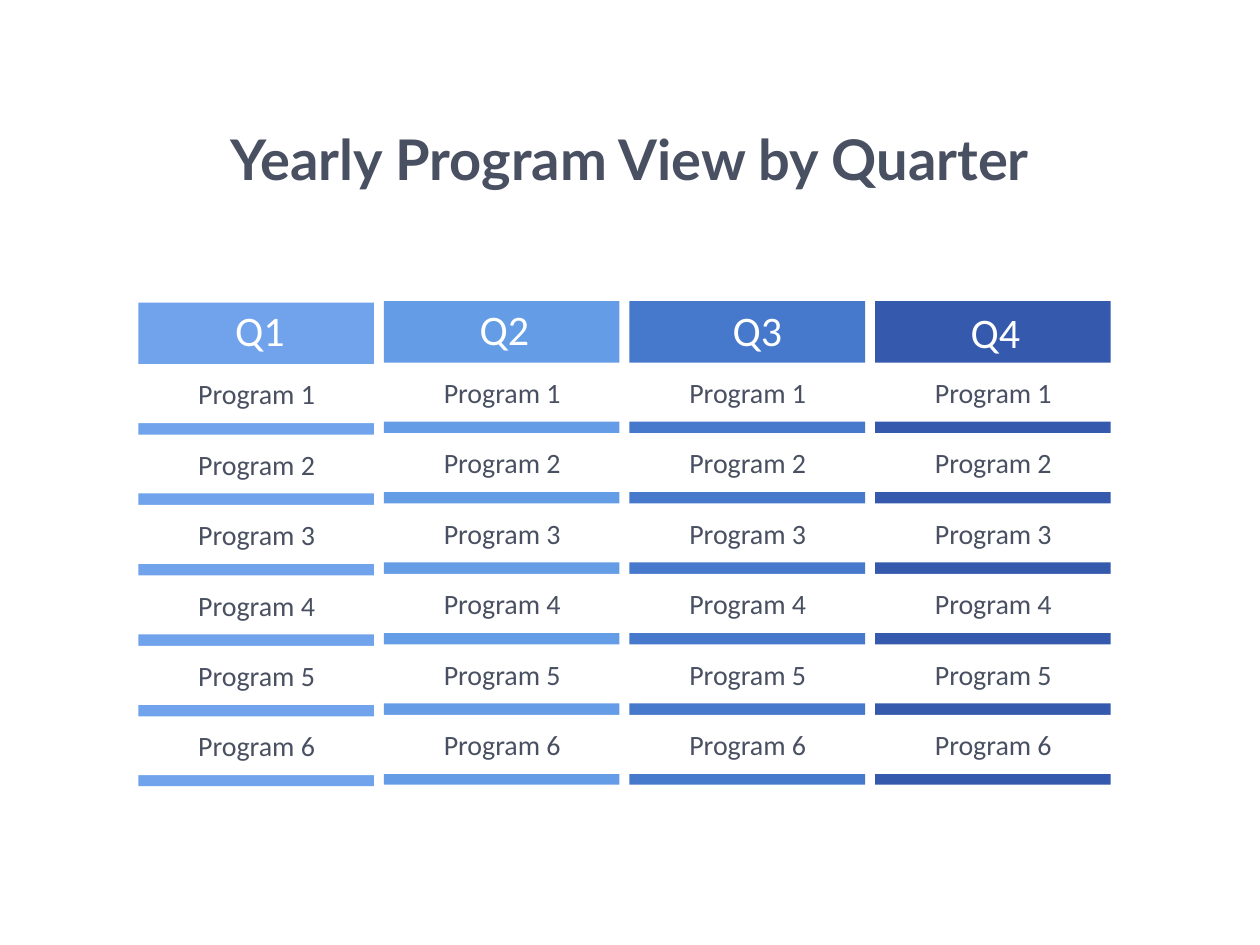
from pptx import Presentation
from pptx.dml.color import RGBColor as Rgb
from pptx.enum.shapes import MSO_SHAPE as Shape
from pptx.enum.text import MSO_ANCHOR as Anchor, MSO_AUTO_SIZE as Auto, PP_ALIGN as Align
from pptx.util import Cm, Pt

HUES = {"ink": "495061", "white": "FFFFFF", "Q1": "70A3EB",
        "Q2": "649CE6", "Q3": "4678CC", "Q4": "3459AD"}
FONTS = {
    "title": {"name": "Lato", "size": Pt(32), "bold": True},
    "head": {"name": "Calibri", "size": Pt(24)},
    "cell": {"name": "Calibri", "size": Pt(16)},
}
# Quarter, top of column, label offset across and down (cm)
COLS = [("Q1", 6.1, 1.7, -0.08), ("Q2", 6.07, 1.68, -0.08),
        ("Q3", 6.07, 1.83, -0.05), ("Q4", 6.07, 1.68, -0.02)]
LEFT, PITCH, WIDE, HIGH = 2.79, 4.95, 4.75, 9.75
ROWS, FIRST, STEP, CELL = 6, 1.24, 1.42, 1.19


def write(frame, text, style, hue, align):
    frame.text = text
    para = frame.paragraphs[0]
    para.alignment = align
    font = para.runs[0].font
    for key, value in FONTS[style].items():
        setattr(font, key, value)
    font.color.rgb = Rgb.from_string(HUES[hue])


def block(slide, x, y, w, h, hue):
    box = slide.shapes.add_shape(Shape.RECTANGLE, Cm(x), Cm(y), Cm(w), Cm(h))
    box.shadow.inherit = False
    box.fill.solid()
    box.fill.fore_color.rgb = Rgb.from_string(HUES[hue])
    box.line.fill.background()
    return box


def heading(slide, x, y, w, h):
    title = slide.shapes.title
    place = {"left": Cm(x), "top": Cm(y), "width": Cm(w), "height": Cm(h)}
    for key, value in place.items():
        setattr(title, key, value)
    title.text_frame.vertical_anchor = Anchor.MIDDLE
    write(title.text_frame, "Yearly Program View by Quarter", "title", "ink", Align.CENTER)


def quarter(slide, x, y, name, dx, dy):
    # Coloured column, seen between the white cells
    block(slide, x, y, WIDE, HIGH, name)

    # Quarter label
    label = slide.shapes.add_textbox(Cm(x + dx), Cm(y + dy), Cm(1.52), Cm(1.3))
    frame = label.text_frame
    frame.word_wrap = False
    frame.auto_size = Auto.SHAPE_TO_FIT_TEXT
    write(frame, name, "head", "white", Align.LEFT)

    # Program cells
    for row in range(ROWS):
        cell = block(slide, x - 0.03, y + FIRST + row * STEP, WIDE + 0.08, CELL, "white")
        cell.text_frame.vertical_anchor = Anchor.MIDDLE
        write(cell.text_frame, f"Program {row + 1}", "cell", "ink", Align.CENTER)


def main():
    deck = Presentation()
    deck.slide_width, deck.slide_height = Cm(25.4), Cm(19.05)
    slide = deck.slides.add_slide(deck.slide_layouts[5])
    heading(slide, 0, 2.34, 25.4, 1.7)
    for col, (name, top, dx, dy) in enumerate(COLS):
        quarter(slide, LEFT + col * PITCH, top, name, dx, dy)
    deck.save("out.pptx")


if __name__ == "__main__":
    main()
